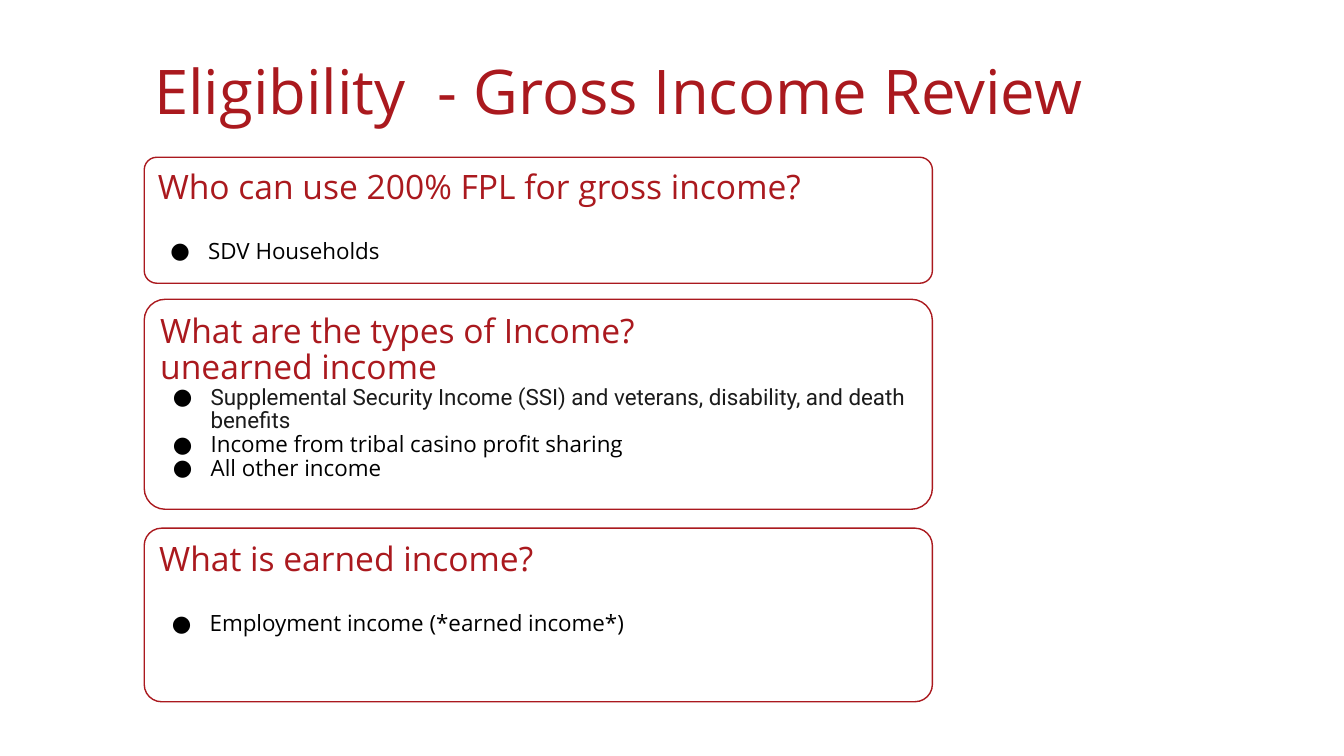
from lxml import etree
from pptx import Presentation
from pptx import util as u
from pptx.dml import color
from pptx.enum import shapes, text
from pptx.oxml import ns

RED, BLACK, CHARCOAL, WHITE = "AA191E", "000000", "1B1B1B", "FFFFFF"
LEFT, CARD_WIDTH = 103, 563
HEADING = {"size": 24, "name": "Open Sans", "color": RED}
BULLET = {"size": 16, "name": "Open Sans", "color": BLACK}
TITLE = {"size": 44, "name": "Open Sans", "color": RED}
BLANK_LINE = 21.8

CARDS = [
    {"top": 112.3, "height": 90, "gap": BLANK_LINE, "spacing": 1.0,
     "headings": ["Who can use 200% FPL for gross income?"],
     "bullets": [("SDV Households", {})]},
    {"top": 213.8, "height": 150, "gap": 0, "spacing": 0.88,
     "headings": ["What are the types of Income?", "unearned income"],
     "bullets": [
         ("Supplemental Security Income (SSI) and veterans, disability, and death benefits",
          {"name": "Roboto", "color": CHARCOAL}),
         ("Income from tribal casino profit sharing", {}),
         ("All other income", {})]},
    {"top": 377.3, "height": 124, "gap": BLANK_LINE, "spacing": 1.0,
     "headings": ["What is earned income?"],
     "bullets": [("Employment income (*earned income*)", {})]},
]


def rgb(value):
    """Turn a hex string into a colour."""
    return color.RGBColor.from_string(value)


def box_lengths(*points):
    """Turn left, top, width and height in points into lengths."""
    return [u.Pt(value) for value in points]


def write(paragraph, words, style):
    """Put one styled run in a left-aligned paragraph."""
    paragraph.alignment = text.PP_ALIGN.LEFT
    run = paragraph.add_run()
    run.text = words
    formats = {"size": u.Pt(style["size"]), "name": style["name"]}
    for name, value in formats.items():
        setattr(run.font, name, value)
    run.font.color.rgb = rgb(style["color"])


def add_bullet(paragraph):
    """Give a paragraph a black round bullet with a hanging indent."""
    properties = paragraph._p.get_or_add_pPr()
    properties.set("marL", str(u.Pt(36)))
    properties.set("indent", str(u.Pt(-27)))
    bullet_color = etree.SubElement(properties, ns.qn("a:buClr"))
    etree.SubElement(bullet_color, ns.qn("a:srgbClr"), val=BLACK)
    etree.SubElement(properties, ns.qn("a:buFont"), typeface="Open Sans")
    etree.SubElement(properties, ns.qn("a:buChar"), char="●")


def add_title(slide, left, top, width, height):
    """Add the slide title in the given box."""
    shape = slide.shapes.add_textbox(*box_lengths(left, top, width, height))
    frame = shape.text_frame
    frame.word_wrap = True
    frame.vertical_anchor = text.MSO_ANCHOR.MIDDLE
    paragraph = frame.paragraphs[0]
    paragraph.line_spacing = 0.9
    write(paragraph, "Eligibility  - Gross Income Review", TITLE)


def add_card(slide, left, top, width, height, card):
    """Add a rounded card with headings above bullets in the given box."""
    shape = slide.shapes.add_shape(
        shapes.MSO_SHAPE.ROUNDED_RECTANGLE, *box_lengths(left, top, width, height))
    shape.adjustments[0] = 0.1
    shape.shadow.inherit = False
    shape.fill.solid()
    shape.fill.fore_color.rgb = rgb(WHITE)
    shape.line.color.rgb = rgb(RED)
    shape.line.width = u.Pt(1)
    frame = shape.text_frame
    frame.word_wrap = True
    frame.vertical_anchor = text.MSO_ANCHOR.TOP
    for index, words in enumerate(card["headings"]):
        paragraph = frame.add_paragraph() if index else frame.paragraphs[0]
        paragraph.line_spacing = card["spacing"] if index else 1.0
        write(paragraph, words, HEADING)
    for index, (words, changes) in enumerate(card["bullets"]):
        paragraph = frame.add_paragraph()
        add_bullet(paragraph)
        paragraph.line_spacing = card["spacing"]
        paragraph.space_before = u.Pt(0 if index else card["gap"])
        write(paragraph, words, {**BULLET, **changes})


def main():
    """Build the slide and save it."""
    presentation = Presentation()
    presentation.slide_width = u.Pt(960)
    presentation.slide_height = u.Pt(540)
    slide = presentation.slides.add_slide(presentation.slide_layouts[6])
    add_title(slide, LEFT, 34, 791, 67)
    for card in CARDS:
        add_card(slide, LEFT, card["top"], CARD_WIDTH, card["height"], card)
    presentation.save("out.pptx")


if __name__ == "__main__":
    main()
